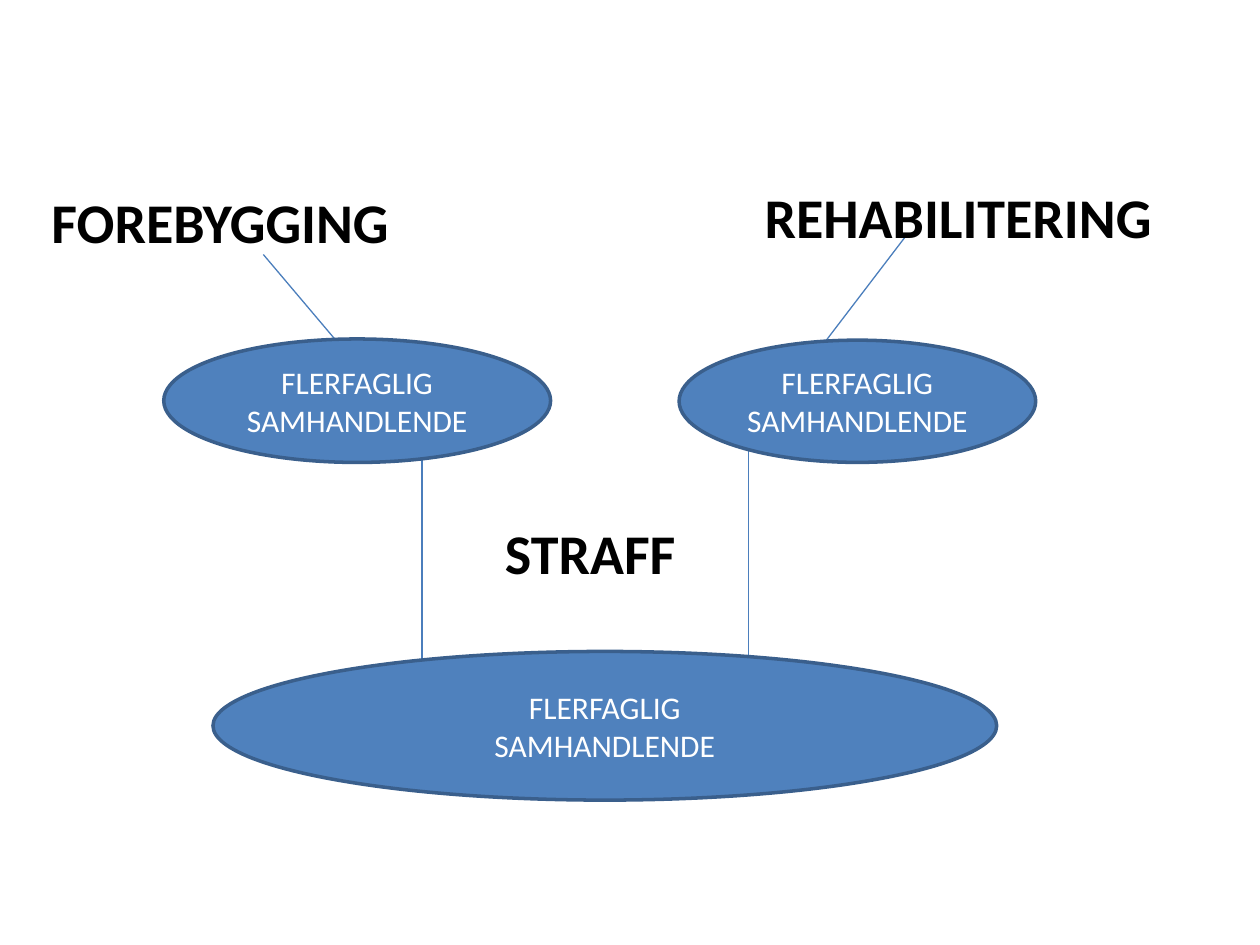
import itertools

import pptx
import pptx.dml.color
import pptx.enum.shapes
import pptx.enum.text
import pptx.oxml
import pptx.util
from pptx.util import Inches

BLACK = pptx.dml.color.RGBColor(0x00, 0x00, 0x00)
WHITE = pptx.dml.color.RGBColor(0xFF, 0xFF, 0xFF)
BLUE = pptx.dml.color.RGBColor(0x4F, 0x81, 0xBD)
OUTLINE_BLUE = pptx.dml.color.RGBColor(0x3A, 0x5F, 0x8C)
LINE_BLUE = pptx.dml.color.RGBColor(0x4B, 0x7E, 0xBC)

HEADING_FONT = {"name": "Calibri", "size": pptx.util.Pt(32), "bold": True}
ELLIPSE_FONT = {"name": "Calibri", "size": pptx.util.Pt(18), "bold": False}
EFFECT_LIST = '<a:effectLst xmlns:a="http://schemas.openxmlformats.org/drawingml/2006/main"/>'
ELLIPSE_LINES = ("FLERFAGLIG", "SAMHANDLENDE")


def write_lines(shape, lines, font_format, color, alignment, anchor):
    """Write one formatted paragraph per line of text."""
    frame = shape.text_frame
    frame.word_wrap = True
    frame.vertical_anchor = anchor
    frame.text = "\n".join(lines)
    for paragraph in frame.paragraphs:
        paragraph.alignment = alignment
        font = paragraph.runs[0].font
        for name, value in font_format.items():
            setattr(font, name, value)
        font.color.rgb = color


def add_heading(slide, box, text, alignment=pptx.enum.text.PP_ALIGN.LEFT):
    """Add a bold heading that stands at the bottom of its box."""
    heading = slide.shapes.add_textbox(*map(Inches, box))
    write_lines(heading, [text], HEADING_FONT, BLACK, alignment,
                pptx.enum.text.MSO_ANCHOR.BOTTOM)


def add_ellipse(slide, box):
    """Add a blue ellipse with the shared two-line label."""
    ellipse = slide.shapes.add_shape(
        pptx.enum.shapes.MSO_SHAPE.OVAL, *map(Inches, box))
    ellipse.shadow.inherit = False
    ellipse.fill.solid()
    ellipse.fill.fore_color.rgb = BLUE
    ellipse.line.color.rgb = OUTLINE_BLUE
    ellipse.line.width = pptx.util.Pt(2)
    write_lines(ellipse, ELLIPSE_LINES, ELLIPSE_FONT, WHITE,
                pptx.enum.text.PP_ALIGN.CENTER, pptx.enum.text.MSO_ANCHOR.MIDDLE)


def add_line(slide, start, end):
    """Add a thin blue line between two points."""
    line = slide.shapes.add_connector(
        pptx.enum.shapes.MSO_CONNECTOR.STRAIGHT, *map(Inches, start + end))
    line.line.color.rgb = LINE_BLUE
    line.line.width = pptx.util.Pt(0.75)
    line._element.spPr.append(pptx.oxml.parse_xml(EFFECT_LIST))


def add_branch(slide, box, text, heading_offset, heading_size, stem_offsets):
    """Add a heading, its bent stem and an ellipse, placed from the ellipse box."""
    left, top = box[:2]
    points = [(left + x, top + y) for x, y in stem_offsets]
    for start, end in itertools.pairwise(points):
        add_line(slide, start, end)
    heading_left, heading_top = heading_offset
    add_heading(slide, (left + heading_left, top + heading_top, *heading_size), text)
    add_ellipse(slide, box)


def add_base(slide, box):
    """Add the wide ellipse with the centred heading above it."""
    left, top = box[:2]
    add_heading(slide, (left + 1.97, top - 1.11, 2.05, 0.64), "STRAFF",
                pptx.enum.text.PP_ALIGN.CENTER)
    add_ellipse(slide, box)


def main():
    """Build the slide and save it."""
    presentation = pptx.Presentation()
    presentation.slide_width = Inches(10)
    presentation.slide_height = Inches(7.5)
    slide = presentation.slides.add_slide(presentation.slide_layouts[6])
    add_branch(slide, (1.3, 2.69, 3.07, 0.98), "FOREBYGGING",
               (-0.99, -1.26), (3.56, 0.64),
               [(0.79, -0.67), (2.05, 0.82), (2.05, 3.03)])
    add_branch(slide, (5.39, 2.7, 2.83, 0.97), "REHABILITERING",
               (0.58, -1.31), (3.5, 0.64),
               [(1.81, -0.84), (0.55, 0.81), (0.55, 3.02)])
    add_base(slide, (1.69, 5.17, 6.22, 1.18))
    presentation.save("out.pptx")


if __name__ == "__main__":
    main()
